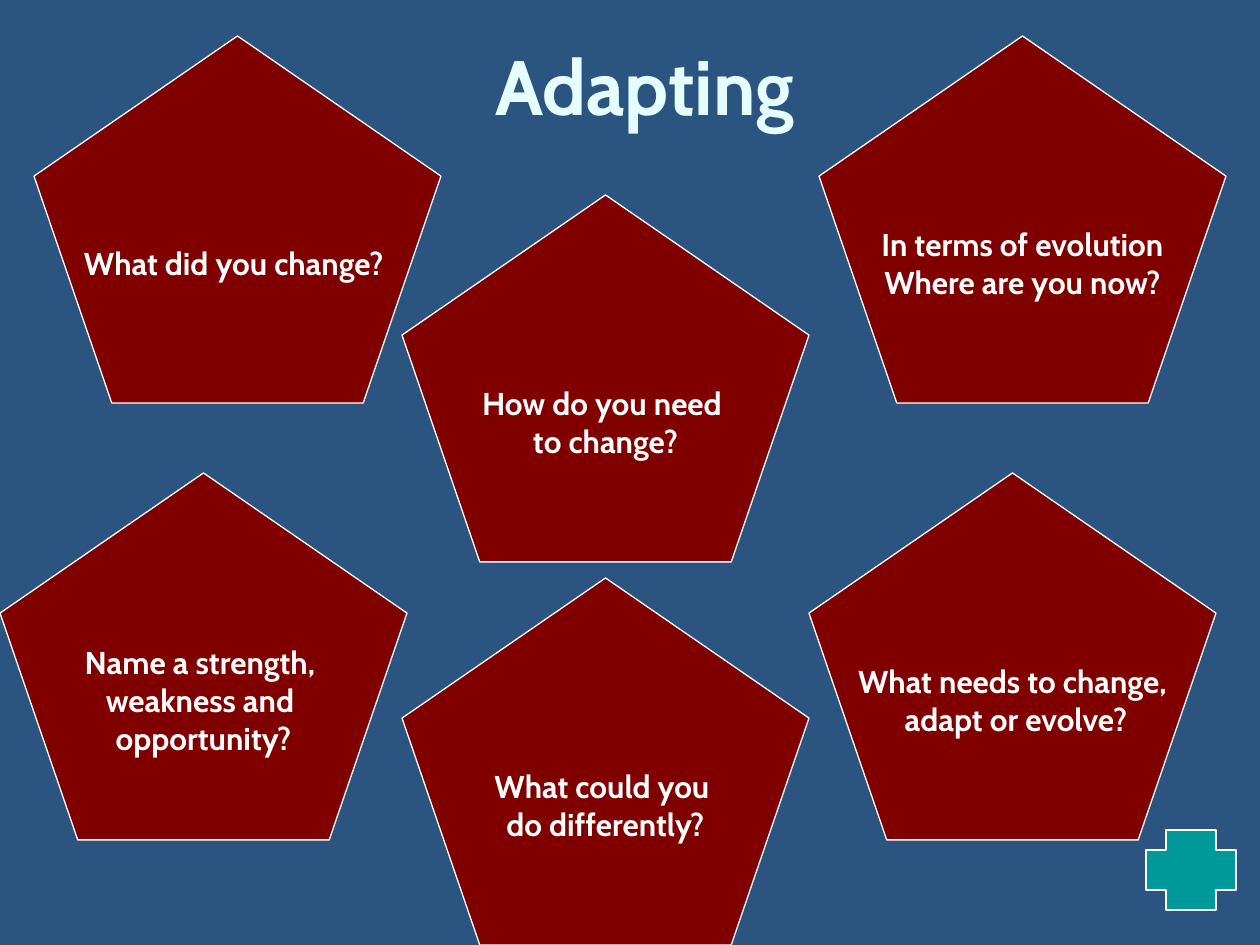
"""Build the "Adapting" slide: six question pentagons and a cross."""
import pptx
import pptx.util
import pptx.dml.color
import pptx.enum.shapes
import pptx.enum.text

SCALE = 914400 / 126
FONT = "Cabin"
COLORS = {
    "background": "2B5481",
    "title": "E5FFFF",
    "pentagon": "800000",
    "cross": "009999",
    "white": "FFFFFF",
}
PENTAGON_SIZE = (407, 367)
QUESTIONS = [
    (34, 36, ["What did you change? "]),
    (0, 473, ["Name a strength, ", "weakness and ", "opportunity?"]),
    (402, 195, ["How do you need ", "to change?"]),
    (402, 578, ["What could you ", "do differently?"]),
    (809, 473, ["What needs to change,", " adapt or evolve?"]),
    (819, 36, ["In terms of evolution", "Where are you now?"]),
]


def add_filled_shape(slide, kind, box, color):
    shape = slide.shapes.add_shape(kind, *[round(value * SCALE) for value in box])
    shape.shadow.inherit = False
    shape.fill.solid()
    shape.fill.fore_color.rgb = pptx.dml.color.RGBColor.from_string(COLORS[color])
    shape.line.color.rgb = pptx.dml.color.RGBColor.from_string(COLORS["white"])
    shape.line.width = pptx.util.Pt(0.75)
    return shape


def format_text(text_frame, size, color):
    text_frame.auto_size = pptx.enum.text.MSO_AUTO_SIZE.NONE
    text_frame.vertical_anchor = pptx.enum.text.MSO_ANCHOR.MIDDLE
    for paragraph in text_frame.paragraphs:
        paragraph.alignment = pptx.enum.text.PP_ALIGN.CENTER
        for run in paragraph.runs:
            run.font.name = FONT
            run.font.size = pptx.util.Pt(size)
            run.font.bold = True
            run.font.color.rgb = pptx.dml.color.RGBColor.from_string(COLORS[color])


presentation = pptx.Presentation()
presentation.slide_width = round(1260 * SCALE)
presentation.slide_height = round(945 * SCALE)
slide = presentation.slides.add_slide(presentation.slide_layouts[5])
slide.background.fill.solid()
slide.background.fill.fore_color.rgb = pptx.dml.color.RGBColor.from_string(COLORS["background"])

title = slide.shapes.title
title.left, title.top, title.width, title.height = [
    round(value * SCALE) for value in (78, -10, 1134, 189)
]
title.text_frame.text = "Adapting"
format_text(title.text_frame, 44, "title")

for left, top, lines in QUESTIONS:
    pentagon = add_filled_shape(
        slide,
        pptx.enum.shapes.MSO_SHAPE.REGULAR_PENTAGON,
        (left, top, *PENTAGON_SIZE),
        "pentagon",
    )
    pentagon.text_frame.text = "\n".join(lines)
    pentagon.text_frame.word_wrap = False
    format_text(pentagon.text_frame, 18, "white")

cross = add_filled_shape(
    slide, pptx.enum.shapes.MSO_SHAPE.CROSS, (1146, 830, 90, 80), "cross"
)
cross.adjustments[0] = 0.25

presentation.save("out.pptx")
